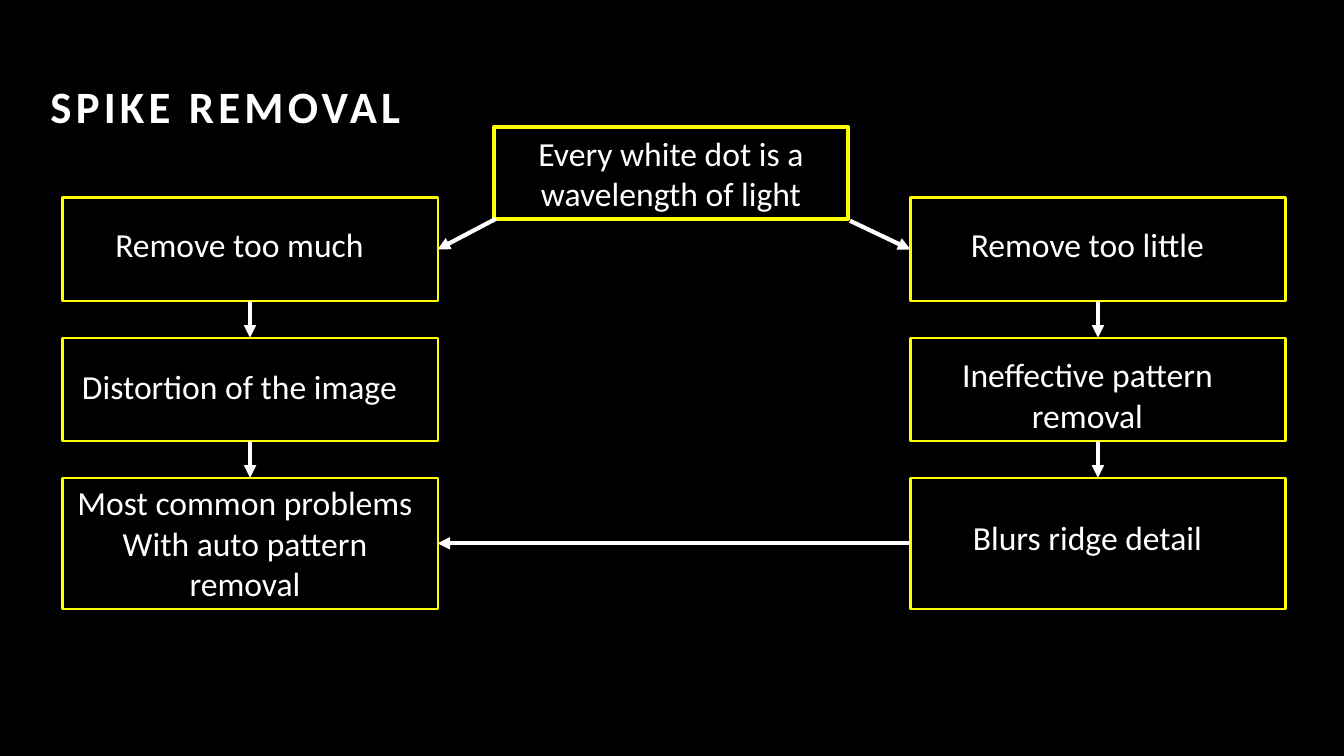
from pptx import Presentation
from pptx.util import Inches, Pt
from pptx.dml.color import RGBColor
from pptx.enum.shapes import MSO_SHAPE as Shape, MSO_CONNECTOR as Link
from pptx.enum.text import PP_ALIGN as Align, MSO_ANCHOR as Anchor
from pptx.oxml import parse_xml
from pptx.oxml.ns import nsdecls, qn
from lxml import etree

HUE = {"back": "000000", "text": "FFFFFF", "edge": "FFFF00", "shade": "404040"}
color = {k: RGBColor.from_string(v) for k, v in HUE.items()}

deck = Presentation()
deck.slide_width, deck.slide_height = Inches(13.33), Inches(7.5)
slide = deck.slides.add_slide(deck.slide_layouts[5])
slide.background.fill.solid()
slide.background.fill.fore_color.rgb = color["back"]


def write(shape, text, size=24, align=Align.CENTER, bold=False):
    frame = shape.text_frame
    frame.word_wrap = True
    frame.vertical_anchor = Anchor.MIDDLE
    frame.text = text
    for para in frame.paragraphs:
        para.alignment = align
        for run in para.runs:
            font = run.font
            font.name, font.size, font.bold = "Calibri", Pt(size), bold
            font.color.rgb = color["text"]


def box(left, top, wide, high, weight):
    rect = slide.shapes.add_shape(Shape.RECTANGLE, *map(Inches, (left, top, wide, high)))
    rect.shadow.inherit = False
    rect.fill.background()
    rect.line.color.rgb = color["edge"]
    rect.line.width = Pt(weight)
    return rect


# Title with wide letters and a soft shadow
title = slide.shapes.title
title.left, title.top, title.width, title.height = map(Inches, (0.4, 0.5, 9, 1.09))
write(title, "SPIKE REMOVAL", 32, Align.LEFT, True)
props = title.text_frame.paragraphs[0].runs[0].font._element
props.set("spc", "300")
props.find(qn("a:solidFill")).addnext(parse_xml(
    f'<a:effectLst {nsdecls("a")}><a:outerShdw blurRad="38100" dist="38100" dir="2700000">'
    f'<a:srgbClr val="{HUE["shade"]}"/></a:outerShdw></a:effectLst>'))

# Starting box
write(box(4.9, 1.26, 3.51, 0.91, 3), "Every white dot is a wavelength of light")

# Two columns of three boxes: left edge, then text top, width, height and words
cols = [
    (0.62, [(2.17, 3.51, 0.5, "Remove too much"),
            (3.58, 3.51, 0.5, "Distortion of the image"),
            (4.73, 3.62, 1.31, "Most common problems\nWith auto pattern removal")]),
    (9.03, [(2.17, 3.51, 0.5, "Remove too little"),
            (3.46, 3.51, 0.91, "Ineffective pattern removal"),
            (5.08, 3.51, 0.5, "Blurs ridge detail")]),
]
grid = []
for left, notes in cols:
    stack = []
    for row, (top, wide, high, words) in enumerate(notes):
        label = slide.shapes.add_textbox(*map(Inches, (left, top, wide, high)))
        write(label, words)
        stack.append(box(left, 1.96 + 1.39 * row, 3.72, 1.3 if row == 2 else 1.03, 1.5))
    grid.append(stack)
near, far = grid

# Arrows: start box and side (or a point), end box and side
links = [((4.92, 2.17), (near[0], 3)), ((8.43, 2.19), (far[0], 1))]
links += [((stack[i], 2), (stack[i + 1], 0)) for stack in grid for i in range(2)]
links.append(((far[2], 1), (near[2], 3)))
for n, (start, end) in enumerate(links):
    point = map(Inches, start) if n < 2 else (0, 0)
    arrow = slide.shapes.add_connector(Link.STRAIGHT, *point, 0, 0)
    if n >= 2:
        arrow.begin_connect(*start)
    arrow.end_connect(*end)
    arrow.line.color.rgb = color["text"]
    arrow.line.width = Pt(3)
    etree.SubElement(arrow.line._get_or_add_ln(), qn("a:tailEnd"), type="triangle")
    etree.SubElement(arrow._element.spPr, qn("a:effectLst"))

deck.save("out.pptx")
